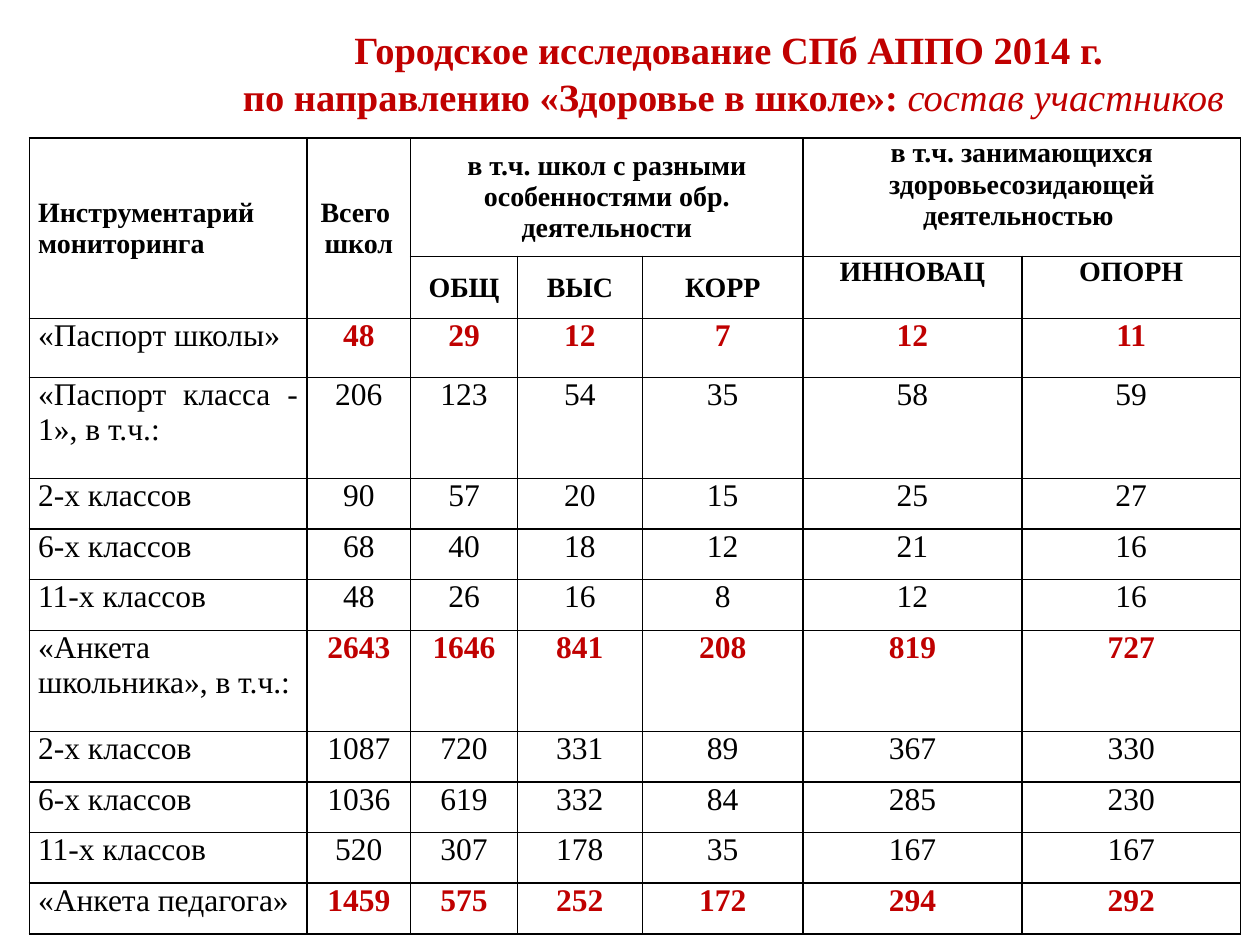
from dataclasses import dataclass

import pptx
import pptx.util
from lxml import etree
from pptx.dml.color import RGBColor
from pptx.enum.text import MSO_ANCHOR, MSO_AUTO_SIZE, PP_ALIGN
from pptx.oxml.ns import qn
from pptx.util import Cm

RED = RGBColor(0xC0, 0x00, 0x00)
BLACK = RGBColor(0x00, 0x00, 0x00)
FACE = "Times New Roman"
WIDTHS = (5.6, 2.09, 2.15, 2.52, 3.24, 4.41, 4.41)
TOP, SUB = 2.39, 1.25  # heights of the two header rows


@dataclass
class Head:
    row: int
    col: int
    text: str
    rows: int = 1
    cols: int = 1
    align: PP_ALIGN = PP_ALIGN.CENTER
    anchor: MSO_ANCHOR = MSO_ANCHOR.MIDDLE


@dataclass
class Line:
    name: str
    nums: tuple
    high: float = 1.02
    key: bool = False


HEADS = (
    Head(0, 0, "Инструментарий \nмониторинга", rows=2, align=PP_ALIGN.JUSTIFY),
    Head(0, 1, "Всего \nшкол", rows=2),
    Head(0, 2, "в т.ч. школ с разными особенностями обр. деятельности", cols=3),
    Head(0, 5, "в т.ч. занимающихся здоровьесозидающей деятельностью ",
         cols=2, anchor=MSO_ANCHOR.TOP),
    Head(1, 2, "ОБЩ"),
    Head(1, 3, "ВЫС"),
    Head(1, 4, "КОРР"),
    Head(1, 5, "ИННОВАЦ", anchor=MSO_ANCHOR.TOP),
    Head(1, 6, "ОПОРН", anchor=MSO_ANCHOR.TOP),
)

LINES = (
    Line("«Паспорт школы»", (48, 29, 12, 7, 12, 11), 1.18, True),
    Line("«Паспорт класса - 1», в т.ч.:", (206, 123, 54, 35, 58, 59), 2.04),
    Line("2-х классов ", (90, 57, 20, 15, 25, 27)),
    Line("6-х классов ", (68, 40, 18, 12, 21, 16)),
    Line("11-х классов", (48, 26, 16, 8, 12, 16)),
    Line("«Анкета школьника», в т.ч.:", (2643, 1646, 841, 208, 819, 727), 2.04, True),
    Line("2-х классов ", (1087, 720, 331, 89, 367, 330)),
    Line("6-х классов ", (1036, 619, 332, 84, 285, 230)),
    Line("11-х классов", (520, 307, 178, 35, 167, 167)),
    Line("«Анкета педагога»", (1459, 575, 252, 172, 294, 292), key=True),
)


def style(frame, size: float, color: RGBColor, bold: bool, align: PP_ALIGN) -> None:
    for para in frame.paragraphs:
        para.alignment = align
        for run in para.runs:
            font = run.font
            font.name, font.size, font.bold = FACE, pptx.util.Pt(size), bold
            font.color.rgb = color


def frame_cell(cell) -> None:
    """Give a cell its margins, thin black borders and no fill."""
    cell.margin_left = cell.margin_right = Cm(0.18)
    cell.margin_top = cell.margin_bottom = 0
    props = cell._tc.get_or_add_tcPr()
    for side in ("a:lnL", "a:lnR", "a:lnT", "a:lnB"):
        edge = etree.SubElement(props, qn(side), w=str(pptx.util.Pt(1)))
        fill = etree.SubElement(edge, qn("a:solidFill"))
        etree.SubElement(fill, qn("a:srgbClr"), val=str(BLACK))
    cell.fill.background()


def add_title(slide) -> None:
    box = slide.shapes.add_textbox(Cm(4.17), Cm(0.41), Cm(21.23), Cm(2.13))
    frame = box.text_frame
    frame.word_wrap = True
    frame.auto_size = MSO_AUTO_SIZE.SHAPE_TO_FIT_TEXT
    frame.text = ("Городское исследование СПб АППО 2014 г. \n"
                  "по направлению «Здоровье в школе»: ")
    tail = frame.paragraphs[1].add_run()
    tail.text = "состав участников"
    style(frame, 22, RED, True, PP_ALIGN.CENTER)
    tail.font.bold, tail.font.italic = False, True


def add_grid(slide) -> None:
    highs = [TOP, SUB] + [line.high for line in LINES]
    table = slide.shapes.add_table(
        len(highs), len(WIDTHS), Cm(0.59), Cm(2.78),
        Cm(sum(WIDTHS)), Cm(sum(highs))).table
    table.first_row = table.horz_banding = False
    for col, wide in zip(table.columns, WIDTHS):
        col.width = Cm(wide)
    for row, high in zip(table.rows, highs):
        row.height = Cm(high)
    for cell in table.iter_cells():
        frame_cell(cell)

    # Header cells
    for head in HEADS:
        cell = table.cell(head.row, head.col)
        if head.rows > 1 or head.cols > 1:
            cell.merge(table.cell(head.row + head.rows - 1, head.col + head.cols - 1))
        cell.vertical_anchor = head.anchor
        cell.text_frame.text = head.text
        style(cell.text_frame, 16, BLACK, True, head.align)

    # Data rows
    for row, line in enumerate(LINES, 2):
        name = table.cell(row, 0).text_frame
        name.text = line.name
        style(name, 18, BLACK, False, PP_ALIGN.JUSTIFY)
        for col, num in enumerate(line.nums, 1):
            frame = table.cell(row, col).text_frame
            frame.text = str(num)
            style(frame, 18, RED if line.key else BLACK, line.key, PP_ALIGN.CENTER)


def main() -> None:
    deck = pptx.Presentation()
    deck.slide_width, deck.slide_height = Cm(25.4), Cm(19.05)
    slide = deck.slides.add_slide(deck.slide_layouts[6])
    add_grid(slide)
    add_title(slide)
    deck.save("out.pptx")


if __name__ == "__main__":
    main()
